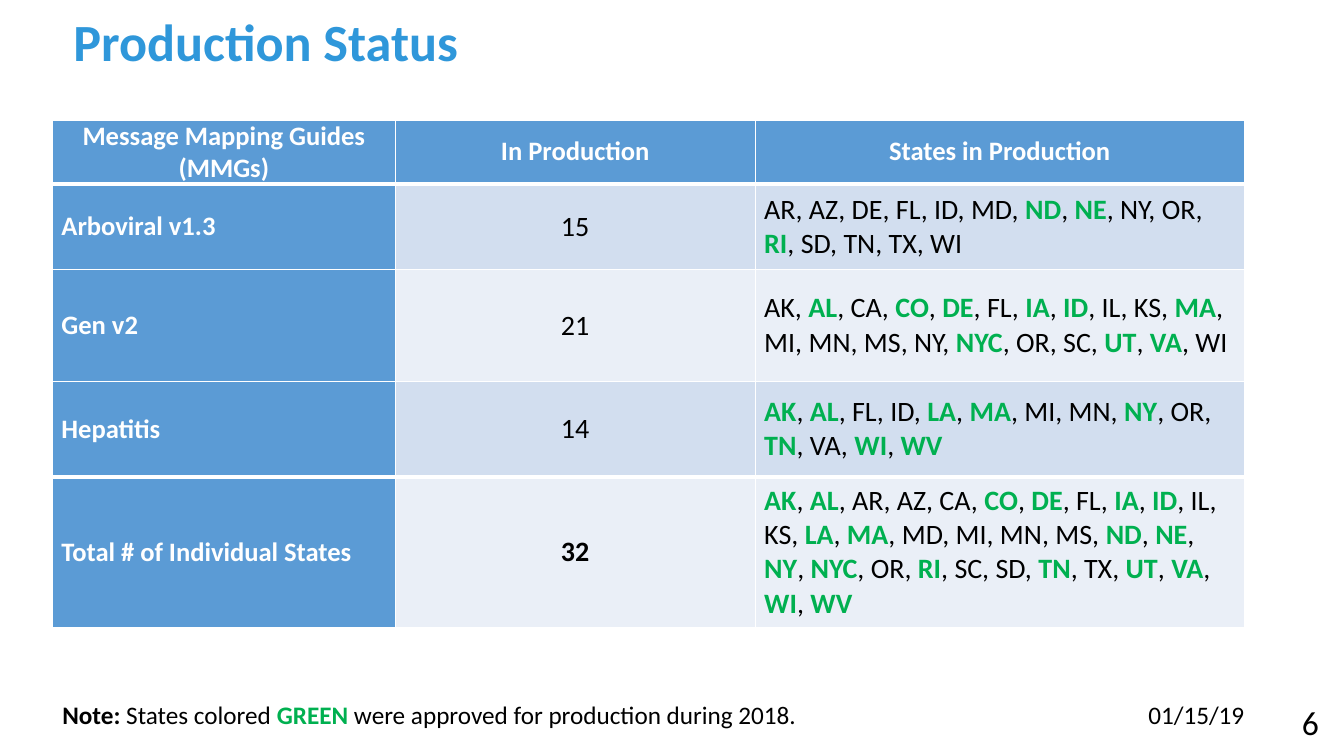
from lxml import etree
from pptx import Presentation
from pptx.dml.color import RGBColor
from pptx.enum.text import MSO_ANCHOR, PP_ALIGN
from pptx.oxml.ns import qn
from pptx.util import Inches, Pt

LEFT, CENTER, RIGHT = PP_ALIGN.LEFT, PP_ALIGN.CENTER, PP_ALIGN.RIGHT
TOP, MIDDLE, BOTTOM = MSO_ANCHOR.TOP, MSO_ANCHOR.MIDDLE, MSO_ANCHOR.BOTTOM

COLORS = {
    "title": "2F97DA",
    "header": "5B9BD5",
    "band_dark": "D2DEEF",
    "band_light": "EAEFF7",
    "approved": "00B050",
    "text": "000000",
    "white": "FFFFFF",
}

HEADINGS = ["Message Mapping Guides (MMGs)", "In Production", "States in Production"]
# States between asterisks were approved during 2018.
GUIDES = [
    ("Arboviral v1.3", "15",
     "AR, AZ, DE, FL, ID, MD, *ND*, *NE*, NY, OR, *RI*, SD, TN, TX, WI"),
    ("Gen v2", "21",
     "AK, *AL*, CA, *CO*, *DE*, FL, *IA*, *ID*, IL, KS, *MA*, MI, MN, MS, NY, "
     "*NYC*, OR, SC, *UT*, *VA*, WI"),
    ("Hepatitis", "14",
     "*AK*, *AL*, FL, ID, *LA*, *MA*, MI, MN, *NY*, OR, *TN*, VA, *WI*, *WV*"),
    ("Total # of Individual States", "32",
     "*AK*, *AL*, AR, AZ, CA, *CO*, *DE*, FL, *IA*, *ID*, IL, KS, *LA*, *MA*, "
     "MD, MI, MN, MS, *ND*, *NE*, *NY*, *NYC*, OR, *RI*, SC, SD, *TN*, TX, "
     "*UT*, *VA*, *WI*, *WV*"),
]
COLUMN_WIDTHS = [3.4, 3.57, 4.85]
ROW_HEIGHTS = [0.63, 0.85, 1.11, 0.95, 1.49]


def approved_parts(marked):
    """Split marked text into (text, color, bold) parts, green between asterisks."""
    return [(piece, "approved" if i % 2 else "text", bool(i % 2))
            for i, piece in enumerate(marked.split("*")) if piece]


class StatusSlide:
    def __init__(self, slide, font):
        self.slide = slide
        self.font = font

    def add_parts(self, frame, parts, size, align=LEFT):
        """Fill the first paragraph with (text, color, bold) parts."""
        paragraph = frame.paragraphs[0]
        paragraph.alignment = align
        for text, color, bold in parts:
            run = paragraph.add_run()
            run.text = text
            run.font.name = self.font
            run.font.size = Pt(size)
            run.font.bold = bold
            run.font.color.rgb = RGBColor.from_string(COLORS[color])
        return paragraph

    def text(self, box, parts, size, align=LEFT, anchor=TOP):
        frame = self.slide.shapes.add_textbox(*map(Inches, box)).text_frame
        frame.word_wrap = True
        frame.vertical_anchor = anchor
        return self.add_parts(frame, parts, size, align)

    def borders(self, cell, top, bottom):
        """Draw white cell borders, with the widths of top and bottom in points."""
        properties = cell._tc.get_or_add_tcPr()
        for side, width in (("L", 1), ("R", 1), ("T", top), ("B", bottom)):
            line = etree.SubElement(properties, qn(f"a:ln{side}"), w=str(Pt(width)))
            fill = etree.SubElement(line, qn("a:solidFill"))
            etree.SubElement(fill, qn("a:srgbClr"), val=COLORS["white"])

    def cell(self, cell, parts, size, align, fill, top, bottom):
        cell.margin_left = cell.margin_right = Inches(0.09)
        cell.margin_top = cell.margin_bottom = 0
        cell.vertical_anchor = MIDDLE
        self.borders(cell, top, bottom)
        cell.fill.solid()
        cell.fill.fore_color.rgb = RGBColor.from_string(COLORS[fill])
        self.add_parts(cell.text_frame, parts, size, align)

    def status_table(self, left, top):
        table = self.slide.shapes.add_table(
            len(ROW_HEIGHTS), len(COLUMN_WIDTHS), Inches(left), Inches(top),
            Inches(sum(COLUMN_WIDTHS)), Inches(sum(ROW_HEIGHTS))).table
        table.horz_banding = False
        for column, width in zip(table.columns, COLUMN_WIDTHS):
            column.width = Inches(width)
        for row, height in zip(table.rows, ROW_HEIGHTS):
            row.height = Inches(height)

        for c, heading in enumerate(HEADINGS):
            self.cell(table.cell(0, c), [(heading, "white", True)], 19, CENTER,
                      "header", 1, 3)
        last = len(GUIDES)
        for r, (guide, count, states) in enumerate(GUIDES, start=1):
            band = "band_dark" if r % 2 else "band_light"
            edges = (3 if r in (1, last) else 1, 3 if r == last - 1 else 1)
            self.cell(table.cell(r, 0), [(guide, "white", True)], 19, LEFT,
                      "header", *edges)
            self.cell(table.cell(r, 1), [(count, "text", r == last)], 20, CENTER,
                      band, *edges)
            self.cell(table.cell(r, 2), approved_parts(states), 20, LEFT,
                      band, *edges)


def main():
    presentation = Presentation()
    presentation.slide_width = Inches(13.33)
    presentation.slide_height = Inches(7.5)
    blank = presentation.slide_layouts[6]
    status = StatusSlide(presentation.slides.add_slide(blank), "Calibri")

    status.text((11.92, 6.91, 1.26, 0.5), [("6", "text", False)], 24, RIGHT)
    title = status.text((0.63, 0.05, 12, 0.71), [("Production Status", "title", True)],
                        37.3, anchor=BOTTOM)
    title.line_spacing = Pt(40)
    status.status_table(0.52, 1.19)
    status.text((11.29, 6.89, 1.22, 0.4), [("01/15/19", "text", False)], 18)
    note = approved_parts(
        "States colored *GREEN* were approved for production during 2018.")
    status.text((0.52, 6.89, 8.76, 0.4), [("Note: ", "text", True)] + note, 18)

    presentation.save("out.pptx")


if __name__ == "__main__":
    main()
